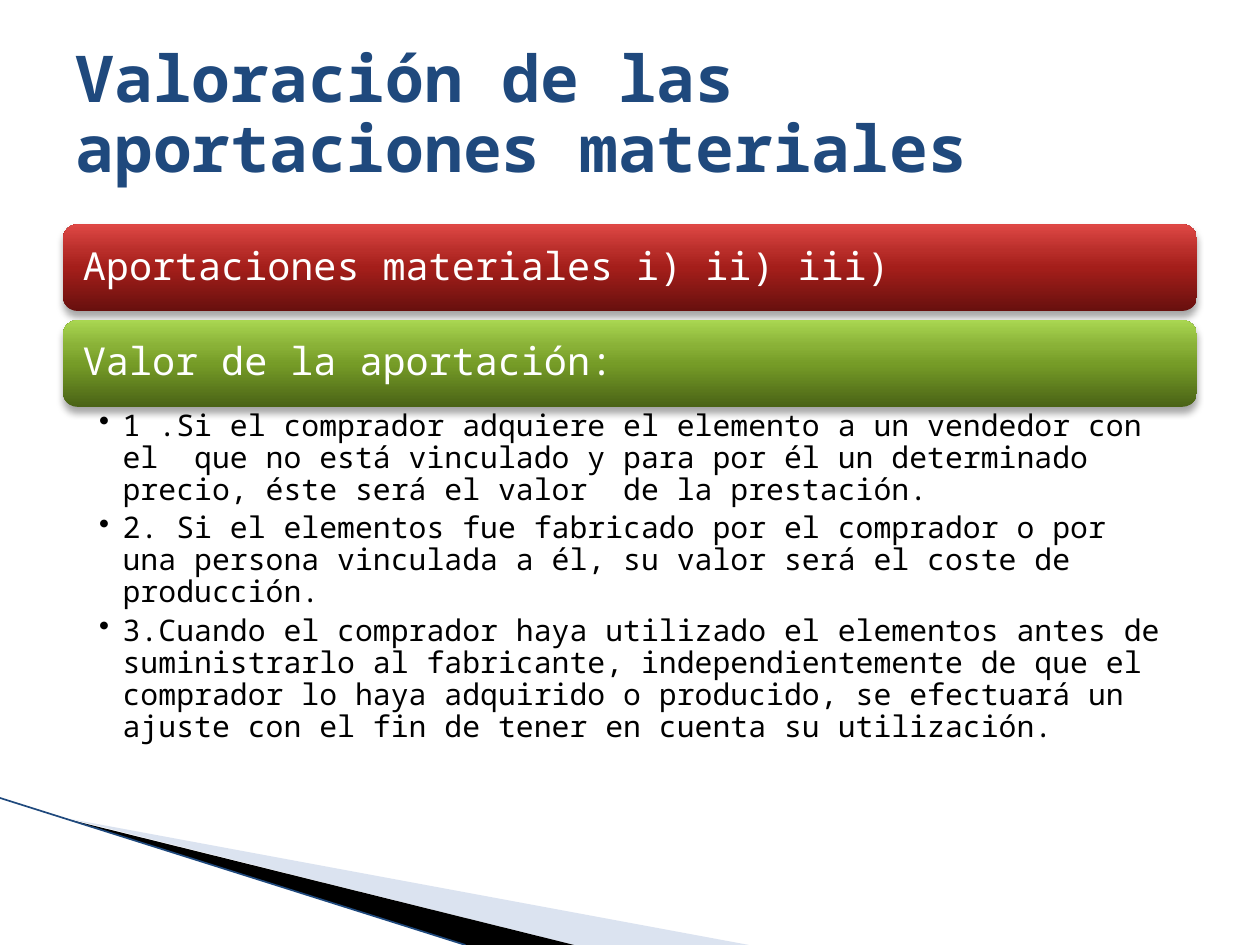
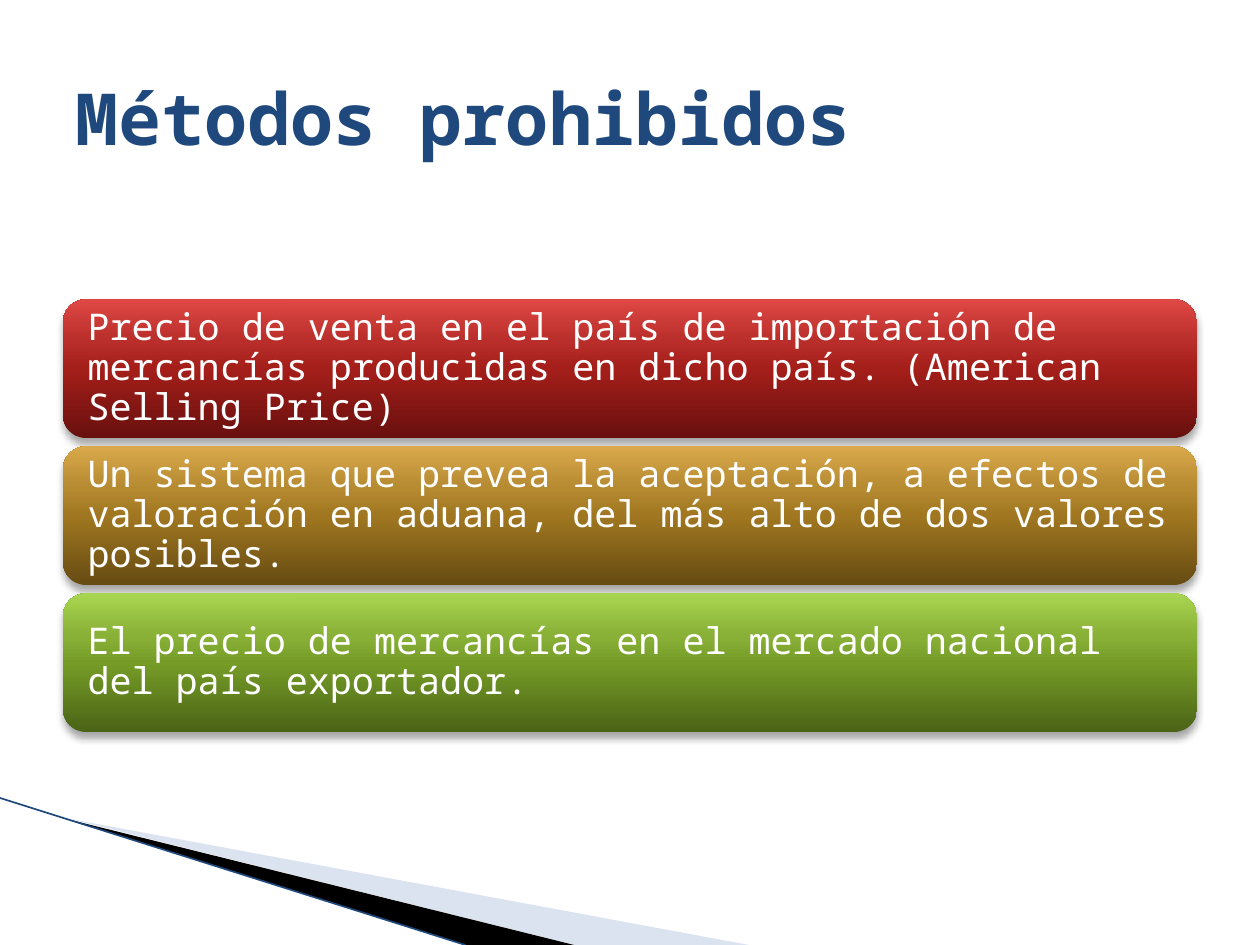
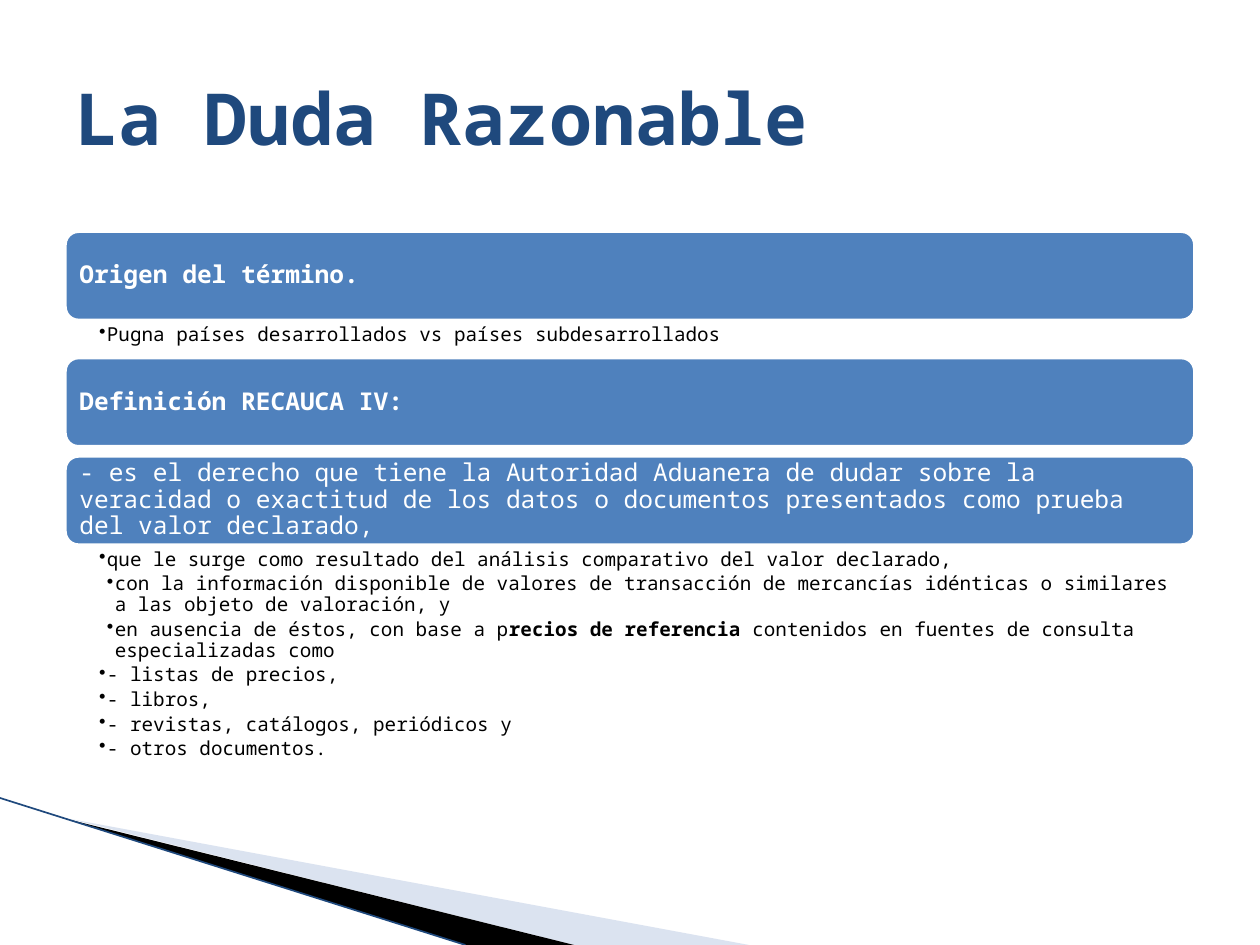
from lxml.etree import SubElement
from pptx import Presentation
from pptx.dml.color import RGBColor
from pptx.enum.shapes import MSO_CONNECTOR, MSO_SHAPE
from pptx.enum.text import MSO_ANCHOR, MSO_AUTO_SIZE, PP_ALIGN
from pptx.oxml.ns import qn
from pptx.util import Pt

FONT = "Noto Sans Mono"
LEFT, WIDE = 36, 648
HEX = {
    "title": "1F497D", "edge": "1F497D", "wing": "A7B9DB",
    "black": "000000", "white": "FFFFFF", "blue": "4F81BD",
}
STOPS = (0, 50, 70, 100)
FADES = {
    "red": ("68100E", "A41E1A", "B92E2A", "DF4845"),
    "gold": ("664B12", "A07720", "B58A31", "DAA94B"),
    "green": ("4A6316", "769C27", "89B137", "A9D651"),
}


def tint(name):
    return RGBColor.from_string(HEX[name])


def write(frame, paras, size, color="black", bold=False, lead=0.9,
          step=0, after=0, pads=None, anchor=MSO_ANCHOR.TOP):
    """Fill a frame; a para is text or (text, level), and *stars* mark bold.

    A step above zero adds bullets, indented by that much per level.
    """
    frame.word_wrap = True
    frame.auto_size = MSO_AUTO_SIZE.NONE
    frame.vertical_anchor = anchor
    if pads:
        (frame.margin_left, frame.margin_top,
         frame.margin_right, frame.margin_bottom) = map(Pt, pads)
    for i, item in enumerate(paras):
        text, level = item if isinstance(item, tuple) else (item, 1)
        para = frame.add_paragraph() if i else frame.paragraphs[0]
        para.alignment = PP_ALIGN.LEFT
        para.line_spacing = lead
        para.space_after = Pt(after)
        if step:
            para.level = level
            props = para._p.get_or_add_pPr()
            props.set("marL", str(Pt(step * level)))
            props.set("indent", str(-Pt(step)))
            SubElement(props, qn("a:buChar"), char="•")
        for j, part in enumerate(text.split("*")):
            if part:
                run = para.add_run()
                run.text = part
                run.font.name = FONT
                run.font.size = Pt(size)
                run.font.bold = bold or j % 2 == 1
                run.font.color.rgb = tint(color)


def fade(shape, name):
    """Give a shape a glossy fill, dark at the foot, and a soft shadow."""
    shape.fill.gradient()
    shape.fill.gradient_angle = 90
    props = shape.element.spPr
    stops = props.find(".//" + qn("a:gsLst"))
    for old in list(stops):
        stops.remove(old)
    for pos, shade in zip(STOPS, FADES[name]):
        stop = SubElement(stops, qn("a:gs"), pos=str(pos * 1000))
        SubElement(stop, qn("a:srgbClr"), val=shade)
    glow = SubElement(props.find(qn("a:effectLst")), qn("a:outerShdw"),
                      blurRad=str(Pt(4)), dist=str(Pt(3)), dir="5400000",
                      rotWithShape="0")
    shade = SubElement(glow, qn("a:srgbClr"), val=HEX["black"])
    SubElement(shade, qn("a:alpha"), val="35000")


def panel(slide, text, top, high, size, color, pad):
    shape = slide.shapes.add_shape(MSO_SHAPE.ROUNDED_RECTANGLE, Pt(LEFT),
                                   Pt(top), Pt(WIDE), Pt(high))
    shape.shadow.inherit = False
    if color in FADES:
        fade(shape, color)
        shape.line.fill.background()
    else:
        shape.fill.solid()
        shape.fill.fore_color.rgb = tint(color)
        shape.line.color.rgb = tint("white")
        shape.line.width = Pt(4.33)
    write(shape.text_frame, [text], size, color="white",
          pads=(pad, 0, pad, 0), anchor=MSO_ANCHOR.MIDDLE)


def points(slide, paras, top, high, size, step, right):
    box = slide.shapes.add_textbox(Pt(LEFT), Pt(top), Pt(WIDE), Pt(high))
    write(box.text_frame, paras, size, step=step, after=size * 0.2,
          pads=(20.6, size / 8, right, size / 8))


def wedge(slide, spots, color, alpha=100):
    pen = slide.shapes.build_freeform(*spots[0], scale=Pt(1))
    pen.add_line_segments(spots[1:], close=True)
    shape = pen.convert_to_shape()
    shape.shadow.inherit = False
    shape.fill.solid()
    shape.fill.fore_color.rgb = tint(color)
    shape.line.fill.background()
    if alpha < 100:
        shade = shape.element.spPr.find(".//" + qn("a:srgbClr"))
        SubElement(shade, qn("a:alpha"), val=str(alpha * 1000))
    return shape


def brand(slide):
    """Draw the corner wedges and move them to the slide's layout."""
    heads = list(slide.slide_layout.placeholders)
    for extra in heads[1:]:
        extra.element.getparent().remove(extra.element)
    edge = slide.shapes.add_connector(MSO_CONNECTOR.STRAIGHT, Pt(0), Pt(456),
                                      Pt(266), Pt(540))
    edge.line.color.rgb = tint("edge")
    edge.line.width = Pt(0.95)
    SubElement(edge.element.spPr, qn("a:effectLst"))
    wing = wedge(slide, [(39.6, 468), (428, 540), (328, 540)], "wing", 40)
    dark = wedge(slide, [(38.2, 467.5), (328.5, 540), (266, 540)], "black")
    for shape in (wing, dark, edge):
        heads[0].element.addprevious(shape.element)


def start(deck, text, size=41, lead=1):
    slide = deck.slides.add_slide(deck.slide_layouts[5])
    title = slide.shapes.title
    title.left, title.top = Pt(LEFT), Pt(21.6)
    title.width, title.height = Pt(WIDE), Pt(90)
    write(title.text_frame, [text], size, color="title", bold=True,
          lead=lead, anchor=MSO_ANCHOR.MIDDLE)
    return slide


def worth(deck):
    slide = start(deck, "Valoración de las aportaciones materiales", 36.9, 0.9)
    brand(slide)
    top, high, pitch = 128.2, 49.5, 54.8
    rows = [("Aportaciones materiales i) ii) iii)", "red"),
            ("Valor de la aportación:", "green")]
    for i, (text, color) in enumerate(rows):
        panel(slide, text, top + i * pitch, high, 22, color, 9)
    points(slide, [
        "1 .Si el comprador adquiere el elemento a un vendedor con el  que no "
        "está vinculado y para por él un determinado precio, éste será el "
        "valor  de la prestación.",
        "2. Si el elementos fue fabricado por el comprador o por una persona "
        "vinculada a él, su valor será el coste de producción.",
        "3.Cuando el comprador haya utilizado el elementos antes de "
        "suministrarlo al fabricante, independientemente de que el comprador "
        "lo haya adquirido o producido, se efectuará un ajuste con el fin de "
        "tener en cuenta su utilización.",
    ], top + pitch + high, 229.7, 17, 13.5, 12)


def banned(deck):
    slide = start(deck, "Métodos prohibidos")
    rows = [
        ("Precio de venta en el país de importación de mercancías producidas "
         "en dicho país. (American Selling Price)", "red"),
        ("Un sistema que prevea la aceptación, a efectos de valoración en "
         "aduana, del más alto de dos valores posibles.", "gold"),
        ("El precio de mercancías en el mercado nacional del país "
         "exportador.", "green"),
    ]
    for i, (text, color) in enumerate(rows):
        panel(slide, text, 171.1 + i * 84, 79.2, 21, color, 10.2)


def doubt(deck):
    slide = start(deck, "La Duda Razonable")
    high = 53.3
    rows = [
        (131, "*Origen del término.*"),
        (203.2, "*Definición RECAUCA IV:*"),
        (259.4, "- es el derecho que tiene la Autoridad Aduanera de dudar "
         "sobre la veracidad o exactitud de los datos o documentos "
         "presentados como prueba del valor declarado,"),
    ]
    for top, text in rows:
        panel(slide, text, top, high, 14, "blue", 6.8)
    lists = [
        (rows[0][0], 18.7,
         ["Pugna países desarrollados vs países subdesarrollados"]),
        (rows[2][0], 146, [
            "que le surge como resultado del análisis comparativo del valor "
            "declarado,",
            ("con la información disponible de valores de transacción de "
             "mercancías idénticas o similares a las objeto de valoración, y",
             2),
            ("en ausencia de éstos, con base a p*recios de referencia "
             "*contenidos en fuentes de consulta especializadas como", 2),
            "- listas de precios,",
            "- libros,",
            "- revistas, catálogos, periódicos y",
            "- otros documentos.",
        ]),
    ]
    for top, tall, paras in lists:
        points(slide, paras, top + high, tall, 11, 4.5, 7.8)


def main():
    deck = Presentation()
    deck.slide_width, deck.slide_height = Pt(720), Pt(540)
    worth(deck)
    banned(deck)
    doubt(deck)
    deck.save("out.pptx")


if __name__ == "__main__":
    main()
